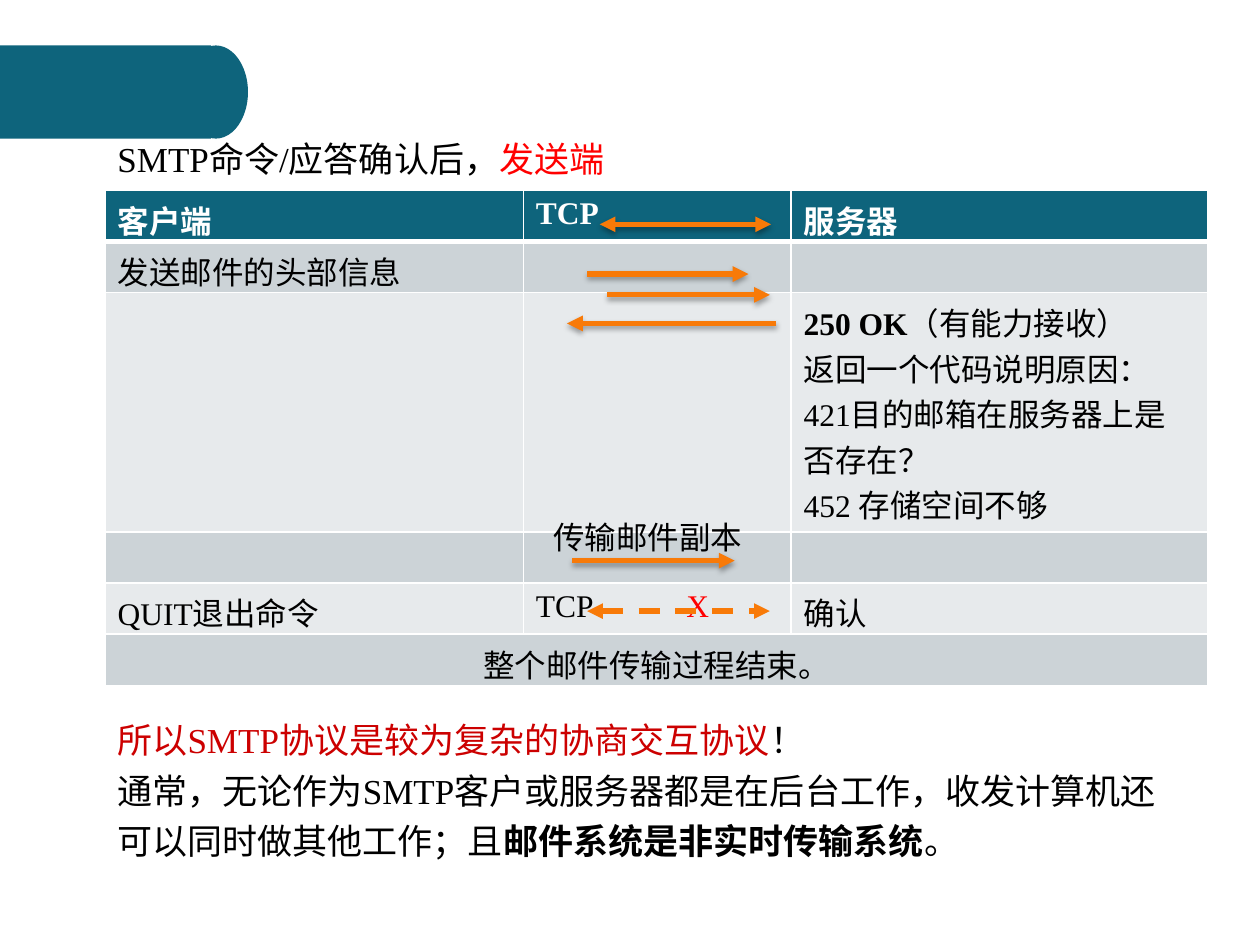
from typing import NamedTuple

from lxml.etree import SubElement
from pptx import Presentation
from pptx.dml.color import RGBColor
from pptx.enum.dml import MSO_LINE
from pptx.enum.shapes import MSO_CONNECTOR, MSO_SHAPE
from pptx.enum.text import MSO_AUTO_SIZE, PP_ALIGN
from pptx.oxml import parse_xml
from pptx.oxml.ns import nsdecls, qn
from pptx.util import Pt

FONT = "Times New Roman"
TEAL, ORANGE, RED, DARK_RED = "0E647C", "F87A08", "FF0000", "CC0000"
BLACK, WHITE, BAND_DARK, BAND_LIGHT = "000000", "FFFFFF", "CCD3D7", "E7EAEC"
COLUMN_WIDTHS = (239, 153, 238)
ROW_HEIGHT, REPLY_ROW_HEIGHT, REPLY_ROW = 29.2, 136.8, 2
X_TAB = 86


class Run(NamedTuple):
    text: str
    color: str | None = None
    bold: bool = False


class Arrow(NamedTuple):
    x1: float
    x2: float
    y: float
    two_way: bool = False
    dashed: bool = False


Paragraph = list[Run]

ROWS: list[list[list[Paragraph]]] = [
    [[[Run("客户端")]], [[Run("TCP")]], [[Run("服务器")]]],
    [[[Run("发送邮件的头部信息")]], [], []],
    [[], [], [[Run("250 OK", bold=True), Run("（有能力接收）")],
              [Run("返回一个代码说明原因：")],
              [Run("421目的邮箱在服务器上是否存在？")],
              [Run("452 存储空间不够")]]],
    [[], [], []],
    [[[Run("QUIT退出命令")]], [[Run("TCP\t"), Run("X", RED)]], [[Run("确认")]]],
    [[[Run("整个邮件传输过程结束。")]], [], []],
]

ARROWS = [
    Arrow(440.6, 342.7, 128.2, two_way=True),
    Arrow(326.9, 419.8, 320.4),
    Arrow(335.5, 427.7, 156.6),
    Arrow(443.5, 324, 184.8),
    Arrow(335.5, 439.9, 349.2, two_way=True, dashed=True),
    Arrow(347, 439.9, 168.5),
]


def rgb(value: str) -> RGBColor:
    return RGBColor.from_string(value)


def write(tf, paragraphs: list[Paragraph], size: float, color: str = BLACK,
          bold: bool = False, spacing: float | None = None) -> None:
    for i, runs in enumerate(paragraphs):
        p = tf.add_paragraph() if i else tf.paragraphs[0]
        if any("\t" in run.text for run in runs):
            tabs = SubElement(p._p.get_or_add_pPr(), qn("a:tabLst"))
            SubElement(tabs, qn("a:tab"), pos=str(Pt(X_TAB)), algn="l")
        if spacing:
            p.line_spacing = spacing
        p.font.name, p.font.size = FONT, Pt(size)
        for run in runs:
            r = p.add_run()
            r.text = run.text
            r.font.name, r.font.size = FONT, Pt(size)
            r.font.bold = bold or run.bold
            r.font.color.rgb = rgb(run.color or color)


def add_text(s, x: float, y: float, w: float, h: float, paragraphs: list[Paragraph],
             size: float, spacing: float | None = None) -> None:
    tf = s.shapes.add_textbox(Pt(x), Pt(y), Pt(w), Pt(h)).text_frame
    tf.word_wrap = True
    tf.auto_size = MSO_AUTO_SIZE.SHAPE_TO_FIT_TEXT
    write(tf, paragraphs, size, spacing=spacing)


def add_block(s, kind: MSO_SHAPE, x: float, y: float, w: float, h: float) -> None:
    sp = s.shapes.add_shape(kind, Pt(x), Pt(y), Pt(w), Pt(h))
    sp.shadow.inherit = False
    sp.fill.solid()
    sp.fill.fore_color.rgb = rgb(TEAL)
    sp.line.fill.background()


def style_cell(cell, fill: str, bottom: float) -> None:
    tc_pr = cell._tc.get_or_add_tcPr()
    for side, width in (("L", 1), ("R", 1), ("T", 1), ("B", bottom)):
        tc_pr.append(parse_xml(
            f'<a:ln{side} {nsdecls("a")} w="{Pt(width)}"><a:solidFill>'
            f'<a:srgbClr val="{WHITE}"/></a:solidFill></a:ln{side}>'))
    cell.fill.solid()
    cell.fill.fore_color.rgb = rgb(fill)


def add_exchange_table(s, x: float, y: float) -> None:
    heights = [REPLY_ROW_HEIGHT if i == REPLY_ROW else ROW_HEIGHT for i in range(len(ROWS))]
    table = s.shapes.add_table(len(ROWS), len(COLUMN_WIDTHS), Pt(x), Pt(y),
                               Pt(sum(COLUMN_WIDTHS)), Pt(sum(heights))).table
    for column, width in zip(table.columns, COLUMN_WIDTHS):
        column.width = Pt(width)
    for i, (cells, height) in enumerate(zip(ROWS, heights)):
        table.rows[i].height = Pt(height)
        header = i == 0
        fill = TEAL if header else (BAND_LIGHT, BAND_DARK)[i % 2]
        for j, paragraphs in enumerate(cells):
            cell = table.cell(i, j)
            style_cell(cell, fill, bottom=3 if header else 1)
            write(cell.text_frame, paragraphs, 18, WHITE if header else BLACK, bold=header)
    last = len(ROWS) - 1
    closing = table.cell(last, 0)
    closing.merge(table.cell(last, len(COLUMN_WIDTHS) - 1))
    closing.text_frame.paragraphs[0].alignment = PP_ALIGN.CENTER


def add_arrow(s, arrow: Arrow) -> None:
    """Draw a level arrow; solid ones cast a soft shadow downwards."""
    c = s.shapes.add_connector(MSO_CONNECTOR.STRAIGHT, Pt(arrow.x1), Pt(arrow.y),
                               Pt(arrow.x2), Pt(arrow.y))
    c.line.color.rgb = rgb(ORANGE)
    c.line.width = Pt(3)
    if arrow.dashed:
        c.line.dash_style = MSO_LINE.DASH
    ln = c.line._get_or_add_ln()
    if arrow.two_way:
        SubElement(ln, qn("a:headEnd"), type="triangle")
    SubElement(ln, qn("a:tailEnd"), type="triangle")
    effects = SubElement(c._element.spPr, qn("a:effectLst"))
    if not arrow.dashed:
        shadow = SubElement(effects, qn("a:outerShdw"), blurRad=str(Pt(3.1)),
                            dist=str(Pt(1.8)), dir="5400000", rotWithShape="0")
        color = SubElement(shadow, qn("a:srgbClr"), val=BLACK)
        SubElement(color, qn("a:alpha"), val="35000")


def main() -> None:
    prs = Presentation()
    prs.slide_width, prs.slide_height = Pt(720), Pt(540)
    s = prs.slides.add_slide(prs.slide_layouts[6])

    add_block(s, MSO_SHAPE.RECTANGLE, 0, 26, 120.5, 53.2)
    add_block(s, MSO_SHAPE.OVAL, 105, 26, 36.7, 53.2)
    add_text(s, 60, 70.5, 600, 34,
             [[Run("SMTP命令/应答确认后，"), Run("发送端", RED)]], 20, 1.2)
    add_exchange_table(s, 60, 108.8)
    for arrow in ARROWS:
        add_arrow(s, arrow)
    add_text(s, 309, 292.5, 129, 29, [[Run("传输邮件副本")]], 18)
    add_text(s, 60, 402.5, 612, 92, [
        [Run("所以SMTP协议是较为复杂的协商交互协议", DARK_RED), Run("！")],
        [Run("通常，无论作为SMTP客户或服务器都是在后台工作，收发计算机还可以同时做其他工作；且"),
         Run("邮件系统是非实时传输系统", bold=True), Run("。")],
    ], 20, 1.2)
    prs.save("out.pptx")


if __name__ == "__main__":
    main()
